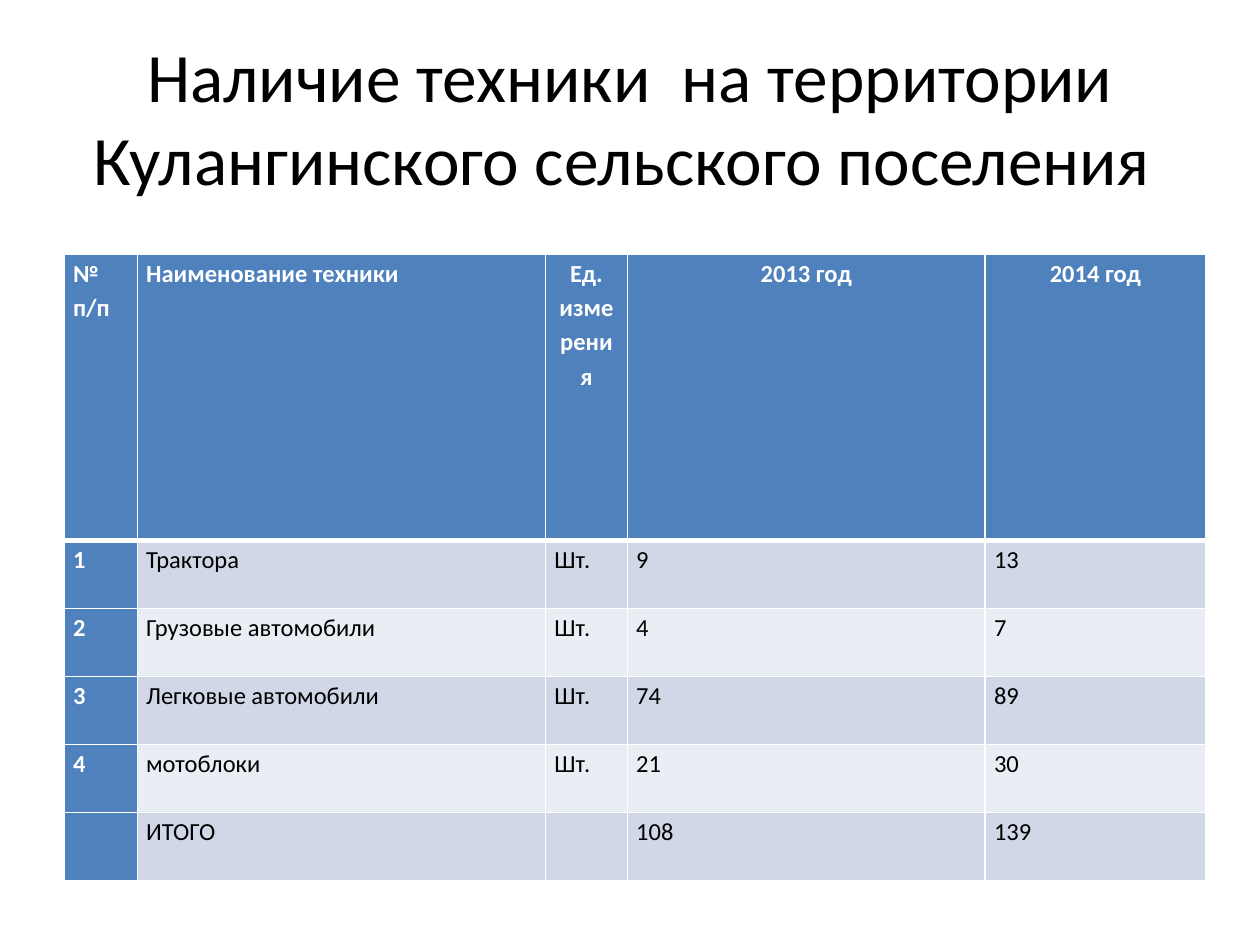
from dataclasses import dataclass
from typing import NamedTuple

from lxml.etree import SubElement
from pptx import Presentation
from pptx.dml.color import RGBColor
from pptx.enum.text import MSO_ANCHOR as Anchor, MSO_AUTO_SIZE as AutoSize, PP_ALIGN as Align
from pptx.oxml.ns import qn
from pptx.util import Inches, Pt


@dataclass(frozen=True)
class Theme:
    font: str = "Calibri"
    title_size: float = 39.6
    table_size: float = 14
    line_spacing: float = 1.15
    dark: str = "000000"
    light: str = "FFFFFF"
    accent: str = "4F81BD"
    bands: tuple[str, str] = ("D0D8E8", "E9EDF4")
    border: float = 1
    header_rule: float = 3


class Column(NamedTuple):
    heading: str
    width: float
    heading_align: Align


class Equipment(NamedTuple):
    number: str
    name: str
    unit: str
    count_2013: str
    count_2014: str


THEME = Theme()
SLIDE_WIDTH, SLIDE_HEIGHT = Inches(10), Inches(7.5)
TITLE = "Наличие техники  на территории Кулангинского сельского поселения "
HEADER_HEIGHT, ROW_HEIGHT = Inches(2.27), Inches(0.54)
COLUMNS = [
    Column("№ п/п", 0.58, Align.LEFT),
    Column("Наименование техники", 3.24, Align.LEFT),
    Column("Ед. измерения", 0.65, Align.CENTER),
    Column("2013 год", 2.84, Align.CENTER),
    Column("2014 год", 1.75, Align.CENTER),
]
ROWS = [
    Equipment("1", "Трактора", "Шт.", "9", "13"),
    Equipment("2", "Грузовые автомобили", "Шт.", "4", "7"),
    Equipment("3", "Легковые автомобили", "Шт.", "74", "89"),
    Equipment("4", "мотоблоки", "Шт.", "21", "30"),
    Equipment("", "ИТОГО", "", "108", "139"),
]


def write_text(frame, text: str, *, size: float, color: str = THEME.dark, bold: bool = False,
               align: Align = Align.LEFT, line_spacing: float = 1.0) -> None:
    paragraph = frame.paragraphs[0]
    paragraph.alignment = align
    paragraph.line_spacing = line_spacing
    if text:
        paragraph.add_run().text = text
    for font in [paragraph.font, *(run.font for run in paragraph.runs)]:
        font.name, font.size, font.bold = THEME.font, Pt(size), bold
        font.color.rgb = RGBColor.from_string(color)


def add_borders(cell, *, top: float, bottom: float) -> None:
    """Draw the four cell borders; call before the cell is filled."""
    properties = cell._tc.get_or_add_tcPr()
    widths = {"a:lnL": THEME.border, "a:lnR": THEME.border, "a:lnT": top, "a:lnB": bottom}
    for tag, width in widths.items():
        line = SubElement(properties, qn(tag), w=str(Pt(width)))
        SubElement(SubElement(line, qn("a:solidFill")), qn("a:srgbClr"), val=THEME.light)


def format_cell(cell, text: str, row: int, column: int) -> None:
    is_header = row == 0
    is_accent = is_header or column == 0
    add_borders(cell, top=THEME.header_rule if row == 1 else THEME.border,
                bottom=THEME.header_rule if is_header else THEME.border)
    cell.fill.solid()
    fill = THEME.accent if is_accent else THEME.bands[(row - 1) % 2]
    cell.fill.fore_color.rgb = RGBColor.from_string(fill)
    cell.margin_left = cell.margin_right = Inches(0.07)
    cell.margin_top = cell.margin_bottom = 0
    write_text(cell.text_frame, text, size=THEME.table_size, bold=is_accent,
               color=THEME.light if is_accent else THEME.dark,
               align=COLUMNS[column].heading_align if is_header else Align.LEFT,
               line_spacing=THEME.line_spacing)


def set_title(slide) -> None:
    title = slide.shapes.title
    title.left, title.top = int(SLIDE_WIDTH * 0.05), int(SLIDE_HEIGHT * 0.04)
    title.width, title.height = int(SLIDE_WIDTH * 0.9), Inches(1.25)
    frame = title.text_frame
    frame.word_wrap, frame.auto_size = True, AutoSize.NONE
    frame.vertical_anchor = Anchor.MIDDLE
    write_text(frame, TITLE, size=THEME.title_size, align=Align.CENTER)


def add_equipment_table(slide) -> None:
    contents = [[column.heading for column in COLUMNS], *ROWS]
    heights = [HEADER_HEIGHT] + [ROW_HEIGHT] * len(ROWS)
    widths = [Inches(column.width) for column in COLUMNS]
    table = slide.shapes.add_table(len(contents), len(COLUMNS), Inches(0.51), Inches(2.02),
                                   sum(widths), sum(heights)).table
    table.first_col = True
    for table_column, width in zip(table.columns, widths):
        table_column.width = width
    for row, (values, height) in enumerate(zip(contents, heights)):
        table.rows[row].height = height
        for column, text in enumerate(values):
            format_cell(table.cell(row, column), text, row, column)


def main() -> None:
    presentation = Presentation()
    presentation.slide_width, presentation.slide_height = SLIDE_WIDTH, SLIDE_HEIGHT
    slide = presentation.slides.add_slide(presentation.slide_layouts.get_by_name("Title Only"))
    set_title(slide)
    add_equipment_table(slide)
    presentation.save("out.pptx")


if __name__ == "__main__":
    main()
